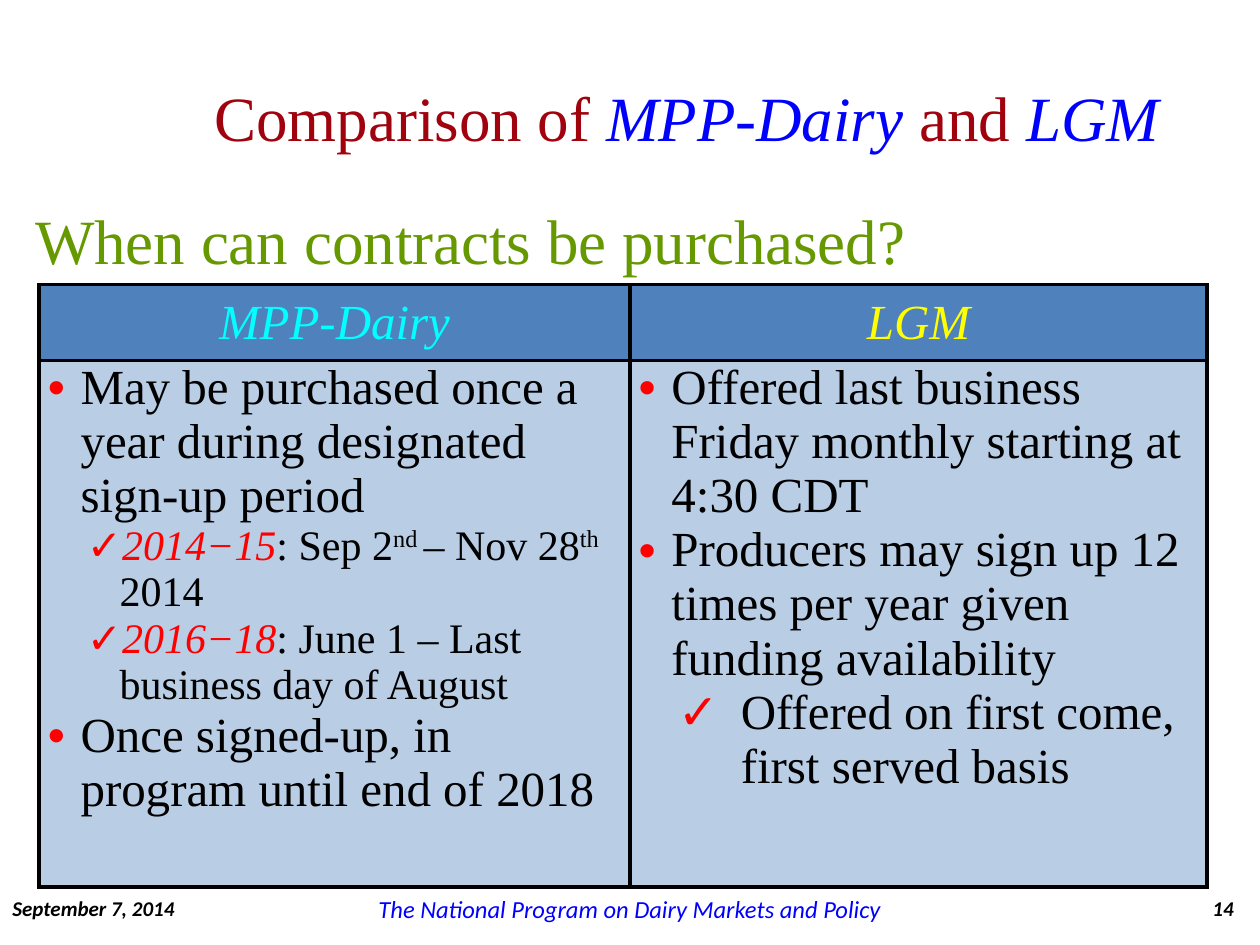
from lxml import etree
from pptx import Presentation
from pptx.dml.color import RGBColor
from pptx.enum.text import MSO_ANCHOR, PP_ALIGN
from pptx.oxml.ns import qn
from pptx.util import Inches, Pt

LEFT, CENTER, RIGHT = PP_ALIGN.LEFT, PP_ALIGN.CENTER, PP_ALIGN.RIGHT
TOP, MIDDLE = MSO_ANCHOR.TOP, MSO_ANCHOR.MIDDLE
SERIF, SANS = "Times New Roman", "Calibri"
HEX = {
    "black": "000000", "blue": "0000FF", "wine": "A0020E",
    "green": "669900", "cyan": "00FFFF", "yellow": "FFFF00",
    "red": "FF0000", "head": "4F81BD", "body": "B9CDE5",
}


def node(parent, tag, **attrs):
    item = etree.SubElement(parent, qn(tag))
    for key, value in attrs.items():
        item.set(key, str(value))
    return item


class Deck:
    def __init__(self):
        self.file = Presentation()
        self.file.slide_width = Inches(10)
        self.file.slide_height = Inches(7.5)
        self.slide = self.file.slides.add_slide(self.file.slide_layouts[5])

    def color(self, name):
        return RGBColor.from_string(HEX[name])

    def add_run(self, para, text, size, color="black", font=SERIF,
                bold=False, italic=False, base=0):
        run = para.add_run()
        run.text = text
        run.font.name = font
        run.font.size = Pt(size)
        run.font.bold = bold
        run.font.italic = italic
        run.font.color.rgb = self.color(color)
        if base:
            run.font._element.set("baseline", str(base * 1000))

    def title(self, box, runs):
        shape = self.slide.shapes.title
        shape.left, shape.top, shape.width, shape.height = map(Inches, box)
        shape.text_frame.vertical_anchor = MIDDLE
        para = shape.text_frame.paragraphs[0]
        para.alignment = CENTER
        for text, style in runs:
            self.add_run(para, text, 36, **style)

    def text(self, box, text, size, align=LEFT, anchor=MIDDLE, wrap=True, **style):
        frame = self.slide.shapes.add_textbox(*map(Inches, box)).text_frame
        frame.word_wrap = wrap
        frame.vertical_anchor = anchor
        para = frame.paragraphs[0]
        para.alignment = align
        self.add_run(para, text, size, **style)

    def bullet(self, para, mark, left, hang):
        props = para._p.get_or_add_pPr()
        props.set("marL", str(Inches(left)))
        props.set("indent", str(-Inches(hang)))
        node(node(props, "a:buClr"), "a:srgbClr", val=HEX["red"])
        node(props, "a:buFont", typeface="Arial")
        node(props, "a:buChar", char=mark)

    def border(self, cell):
        props = cell._tc.get_or_add_tcPr()
        for i, side in enumerate("LRTB"):
            line = node(props, "a:ln" + side, w=Pt(2.25))
            node(node(line, "a:solidFill"), "a:srgbClr", val=HEX["black"])
            props.insert(i, line)

    def cell(self, cell, fill, anchor):
        cell.margin_left = cell.margin_right = Inches(0.07)
        cell.margin_top = cell.margin_bottom = 0
        cell.vertical_anchor = anchor
        cell.fill.solid()
        cell.fill.fore_color.rgb = self.color(fill)
        self.border(cell)
        return cell.text_frame

    def table(self, box, widths, heights, heads, lists):
        grid = self.slide.shapes.add_table(
            len(heights), len(widths), *map(Inches, box)).table
        for row, high in zip(grid.rows, heights):
            row.height = Inches(high)
        for col, wide in enumerate(widths):
            grid.columns[col].width = Inches(wide)
            name, tint = heads[col]
            frame = self.cell(grid.cell(0, col), "head", MIDDLE)
            para = frame.paragraphs[0]
            para.alignment = CENTER
            self.add_run(para, name, 28, tint, italic=True)
            frame = self.cell(grid.cell(1, col), "body", TOP)
            for i, (mark, size, runs) in enumerate(lists[col]):
                para = frame.add_paragraph() if i else frame.paragraphs[0]
                self.bullet(para, *mark)
                for text, style in runs:
                    self.add_run(para, text, size, **style)


def main():
    deck = Deck()
    wine = {"color": "wine"}
    blue = {"color": "blue", "italic": True}
    years = {"color": "red", "italic": True}
    raised = {"base": 30}
    dot = ("•", 0.26, 0.26)
    check = ("✓", 0.57, 0.26)
    wide = ("✓", 0.81, 0.5)

    deck.title((1.4, 0.3, 8.1, 1.25), [
        ("Comparison of ", wine), ("MPP-Dairy", blue),
        (" and ", wine), ("LGM", blue)])
    deck.text((0.18, 1.55, 7.44, 0.71), "When can contracts be purchased?", 36,
              anchor=TOP, wrap=False, color="green")

    dairy = [
        (dot, 28, [("May be purchased once a year during designated "
                    "sign-up period", {})]),
        (check, 24, [("2014−15", years), (": Sep 2", {}), ("nd ", raised),
                     ("– Nov 28", {}), ("th", raised), (" 2014", {})]),
        (check, 24, [("2016−18", years),
                     (": June 1 – Last business day of August", {})]),
        (dot, 28, [("Once signed-up, in program until end of 2018", {})]),
    ]
    margin = [
        (dot, 28, [("Offered last business Friday monthly starting at "
                    "4:30 CDT", {})]),
        (dot, 28, [("Producers may sign up 12 times per year given "
                    "funding availability", {})]),
        (wide, 28, [("Offered on first come, first served basis", {})]),
    ]
    deck.table((0.31, 2.26, 9.27, 4.78), (4.69, 4.58), (0.6, 4.18),
               (("MPP-Dairy", "cyan"), ("LGM", "yellow")), (dairy, margin))

    foot = {"font": SANS, "italic": True}
    deck.text((0, 7.09, 1.53, 0.24), "September 7, 2014", 12, bold=True, **foot)
    deck.text((2.88, 7.09, 4.24, 0.24),
              "The National Program on Dairy Markets and Policy", 14,
              CENTER, color="blue", **foot)
    deck.text((9.11, 7.09, 0.78, 0.24), "14", 12, RIGHT, bold=True, **foot)
    deck.file.save("out.pptx")


if __name__ == "__main__":
    main()
